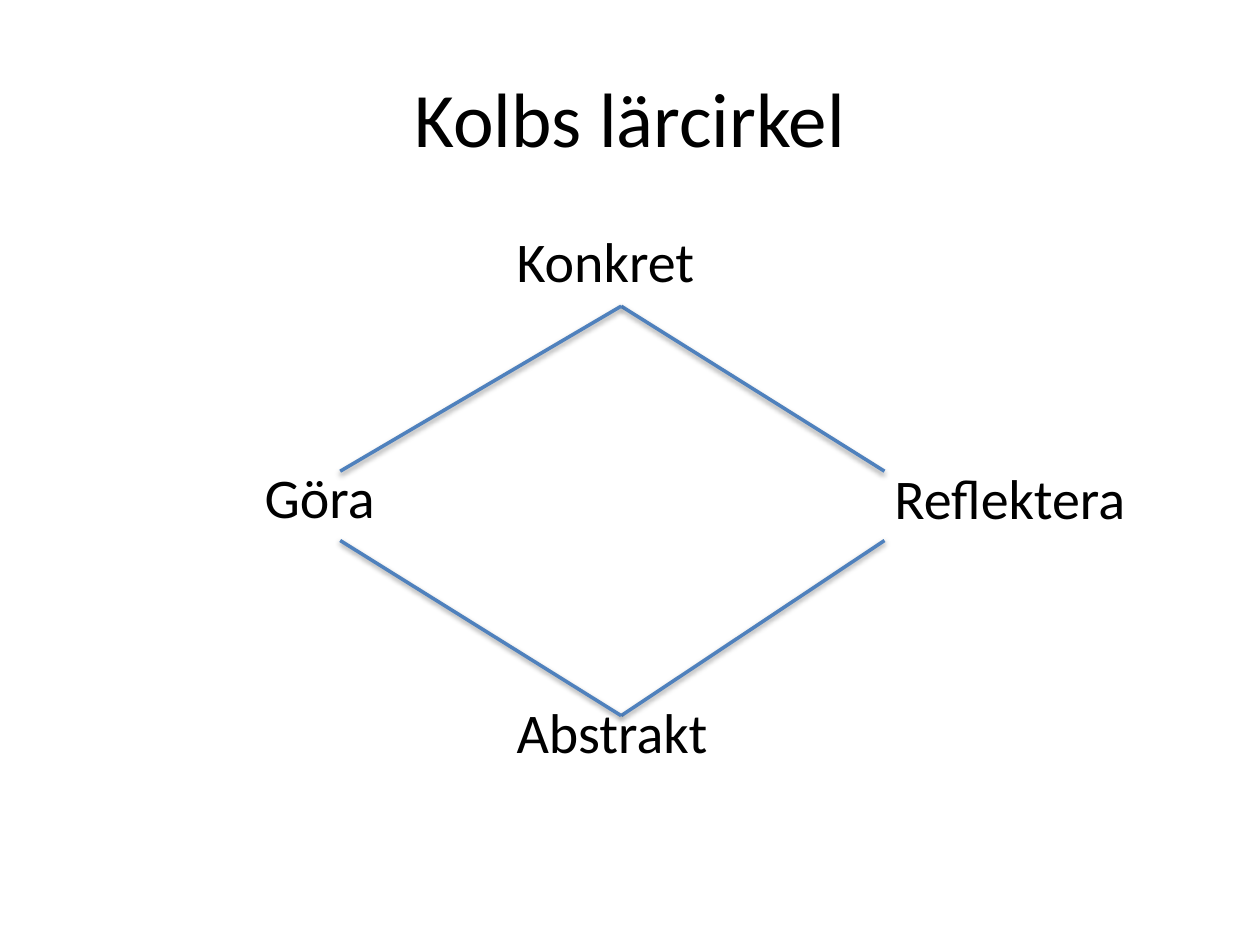
from lxml import etree
from pptx import Presentation
from pptx.dml.color import RGBColor
from pptx.enum.shapes import MSO_CONNECTOR
from pptx.enum.text import MSO_ANCHOR, MSO_AUTO_SIZE, PP_ALIGN
from pptx.oxml import parse_xml
from pptx.oxml.ns import nsdecls, qn
from pptx.util import Inches, Pt

COLORS = {"text": "000000", "line": "4F81BD", "background": "FFFFFF"}
SHADOW = (
    f'<a:effectLst {nsdecls("a")}>'
    '<a:outerShdw blurRad="40000" dist="20000" dir="5400000" rotWithShape="0">'
    '<a:srgbClr val="000000"><a:alpha val="38000"/></a:srgbClr>'
    '</a:outerShdw></a:effectLst>'
)


def place(shape, left, top, width, height):
    box = {"left": left, "top": top, "width": width, "height": height}
    for name, value in box.items():
        setattr(shape, name, Inches(value))


def format_text(paragraph, size, alignment):
    paragraph.alignment = alignment
    for run in paragraph.runs:
        for name, value in {"name": "Calibri", "size": Pt(size), "bold": False}.items():
            setattr(run.font, name, value)
        run.font.color.rgb = RGBColor.from_string(COLORS["text"])


presentation = Presentation()
presentation.slide_width = Inches(10)
presentation.slide_height = Inches(7.5)
slide = presentation.slides.add_slide(presentation.slide_layouts[1])
slide.background.fill.solid()
slide.background.fill.fore_color.rgb = RGBColor.from_string(COLORS["background"])

title = slide.shapes.title
place(title, 0.5, 0.3, 9, 1.25)
title.text_frame.text = "Kolbs lärcirkel"
title.text_frame.vertical_anchor = MSO_ANCHOR.MIDDLE
format_text(title.text_frame.paragraphs[0], 44, PP_ALIGN.CENTER)

body = slide.placeholders[1]
place(body, 0.5, 1.75, 9, 4.95)
body.text_frame.auto_size = MSO_AUTO_SIZE.NONE
body.text_frame.vertical_anchor = MSO_ANCHOR.TOP

stages = [("Konkret", 3.5, 0), ("Göra", 1.5, 96), ("Abstrakt", 3.5, 96)]
body.text_frame.text = "\n".join(text for text, indent, gap in stages)
for paragraph, (text, indent, gap) in zip(body.text_frame.paragraphs, stages):
    format_text(paragraph, 32, PP_ALIGN.LEFT)
    paragraph.space_before = Pt(gap)
    properties = paragraph._p.get_or_add_pPr()
    properties.set("marL", str(Inches(indent)))
    properties.set("indent", "0")
    etree.SubElement(properties, qn("a:buNone"))

reflection = slide.shapes.add_textbox(Inches(7), Inches(3.63), Inches(2.5), Inches(0.64))
reflection.text_frame.word_wrap = True
reflection.text_frame.text = "Reflektera"
format_text(reflection.text_frame.paragraphs[0], 32, PP_ALIGN.LEFT)

top, bottom = (4.93, 2.43), (4.93, 5.68)
sides = [
    (top, (7.02, 3.74)),
    ((7.02, 4.29), bottom),
    (bottom, (2.7, 4.29)),
    ((2.7, 3.74), top),
]
for start, end in sides:
    points = [Inches(value) for value in start + end]
    connector = slide.shapes.add_connector(MSO_CONNECTOR.STRAIGHT, *points)
    connector.line.width = Pt(2)
    connector.line.color.rgb = RGBColor.from_string(COLORS["line"])
    connector._element.spPr.append(parse_xml(SHADOW))

presentation.save("out.pptx")
